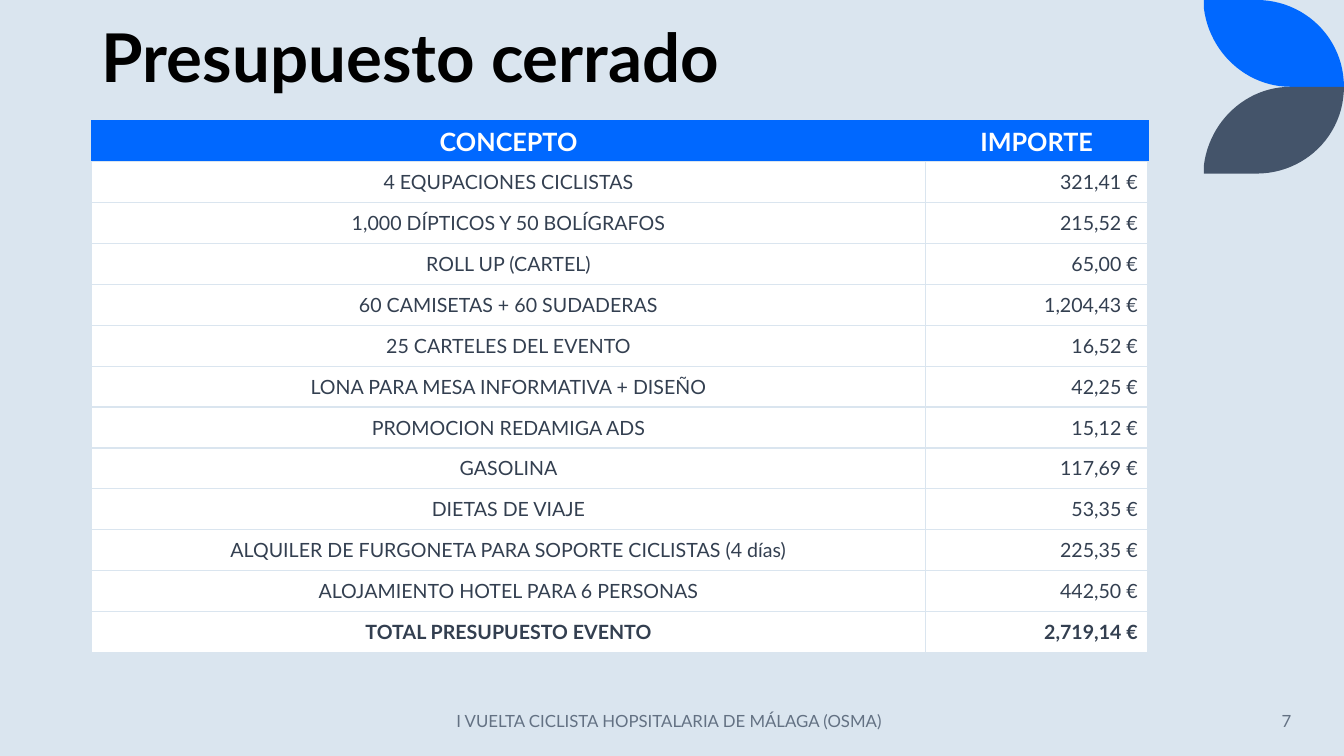
from dataclasses import dataclass

from lxml import etree
from pptx import Presentation
from pptx.dml.color import RGBColor as RGB
from pptx.enum.text import MSO_ANCHOR as ANCHOR, MSO_AUTO_SIZE as AUTO, PP_ALIGN as ALIGN
from pptx.oxml.ns import qn
from pptx.util import Pt


@dataclass(frozen=True)
class Theme:
    font: str = "Lato"
    back: str = "DAE5EF"
    accent: str = "0068FF"
    slate: str = "44546A"
    ink: str = "333F50"
    muted: str = "637183"
    black: str = "000000"
    white: str = "FFFFFF"
    title: int = 48
    head: int = 18
    body: int = 14
    small: int = 12


T = Theme()

HEADER = ("CONCEPTO", "IMPORTE")
ITEMS = [
    ("4 EQUPACIONES CICLISTAS", "321,41 €"),
    ("1,000 DÍPTICOS Y 50 BOLÍGRAFOS", "215,52 €"),
    ("ROLL UP (CARTEL)", "65,00 €"),
    ("60 CAMISETAS + 60 SUDADERAS", "1,204,43 €"),
    ("25 CARTELES DEL EVENTO", "16,52 €"),
    ("LONA PARA MESA INFORMATIVA + DISEÑO", "42,25 €"),
    ("PROMOCION REDAMIGA ADS", "15,12 €"),
    ("GASOLINA", "117,69 €"),
    ("DIETAS DE VIAJE", "53,35 €"),
    ("ALQUILER DE FURGONETA PARA SOPORTE CICLISTAS (4 días)", "225,35 €"),
    ("ALOJAMIENTO HOTEL PARA 6 PERSONAS", "442,50 €"),
]
TOTAL = ("TOTAL PRESUPUESTO EVENTO", "2,719,14 €")


def write(tf, text, size, color, bold=False, align=ALIGN.LEFT, spacing=None):
    p = tf.paragraphs[0]
    p.alignment = align
    p.line_spacing = spacing
    r = p.add_run()
    r.text = text
    r.font.name, r.font.size, r.font.bold = T.font, Pt(size), bold
    r.font.color.rgb = RGB.from_string(color)


def bezier(a, b, c, d, steps=24):
    """Points along a cubic curve, both ends included."""
    for i in range(steps + 1):
        t = i / steps
        u = 1 - t
        yield tuple(u**3 * k + 3 * u * u * t * m + 3 * u * t * t * n + t**3 * o
                    for k, m, n, o in zip(a, b, c, d))


def add_leaf(s, x, y, w, h, color, flip=False):
    outer = bezier((.375, 0), (.72, 0), (1, .44), (1, 1))
    inner = bezier((.62, 1), (.3, 1), (.04, .6), (0, .1))
    points = [(Pt(x + w * px), Pt(y + h * (1 - py if flip else py)))
              for px, py in [(0, 0), *outer, *inner]]
    builder = s.shapes.build_freeform(*points[0], scale=1.0)
    builder.add_line_segments(points[1:], close=True)
    sp = builder.convert_to_shape()
    sp.shadow.inherit = False
    sp.fill.solid()
    sp.fill.fore_color.rgb = RGB.from_string(color)
    sp.line.fill.background()


def add_leaves(s, x, y, w, h):
    add_leaf(s, x, y, w, h / 2, T.accent)
    add_leaf(s, x, y + h / 2, w, h / 2, T.slate, flip=True)


def add_title(s, x, y, w, h, text):
    sp = s.shapes.title
    sp.left, sp.top, sp.width, sp.height = Pt(x), Pt(y), Pt(w), Pt(h)
    tf = sp.text_frame
    tf.auto_size, tf.vertical_anchor = AUTO.NONE, ANCHOR.BOTTOM
    write(tf, text, T.title, T.black, bold=True, spacing=.9)


def set_borders(cell, side, bottom):
    tc_pr = cell._tc.get_or_add_tcPr()
    colors = {"lnL": side, "lnR": side, "lnT": side, "lnB": bottom}
    for i, (tag, color) in enumerate(colors.items()):
        ln = etree.Element(qn(f"a:{tag}"), w=str(Pt(1)))
        fill = etree.SubElement(ln, qn("a:solidFill"))
        etree.SubElement(fill, qn("a:srgbClr"), val=color)
        tc_pr.insert(i, ln)


def add_budget(s, x, y, w, h, amount_w=159):
    rows = [HEADER, *ITEMS, TOTAL]
    table = s.shapes.add_table(len(rows), 2, Pt(x), Pt(y), Pt(w), Pt(h)).table
    table.first_row = table.horz_banding = False
    table.columns[0].width, table.columns[1].width = Pt(w - amount_w), Pt(amount_w)
    for i, row in enumerate(rows):
        table.rows[i].height = Pt(h / len(rows))
        head = row is HEADER
        fill = T.accent if head else T.white
        for j, text in enumerate(row):
            cell = table.cell(i, j)
            cell.vertical_anchor = ANCHOR.MIDDLE
            cell.fill.solid()
            cell.fill.fore_color.rgb = RGB.from_string(fill)
            set_borders(cell, T.accent if head else T.back, T.back)
            write(cell.text_frame, text, T.head if head else T.body,
                  T.white if head else T.ink, bold=head or row is TOTAL,
                  align=ALIGN.RIGHT if j and not head else ALIGN.CENTER)


def add_note(s, x, y, w, h, text, align):
    tf = s.shapes.add_textbox(Pt(x), Pt(y), Pt(w), Pt(h)).text_frame
    tf.word_wrap, tf.vertical_anchor = True, ANCHOR.MIDDLE
    write(tf, text, T.small, T.muted, align=align)


def add_footer(s, x, y, w, h, text, number):
    number_w = 130
    add_note(s, x, y, 354, h, text, ALIGN.CENTER)
    add_note(s, x + w - number_w, y, number_w, h, number, ALIGN.RIGHT)


def budget_slide(prs):
    s = prs.slides.add_slide(prs.slide_layouts[5])
    s.background.fill.solid()
    s.background.fill.fore_color.rgb = RGB.from_string(T.back)
    add_leaves(s, 860, 0, 100, 124)
    add_title(s, 65.5, 0, 770, 72.7, "Presupuesto cerrado")
    add_budget(s, 65.5, 86.4, 754.5, 379.6)
    add_footer(s, 301, 500.4, 628.5, 28.8,
               "I VUELTA CICLISTA HOPSITALARIA DE MÁLAGA (OSMA)", "7")


def main():
    prs = Presentation()
    prs.slide_width, prs.slide_height = Pt(960), Pt(540)
    budget_slide(prs)
    prs.save("out.pptx")


if __name__ == "__main__":
    main()
